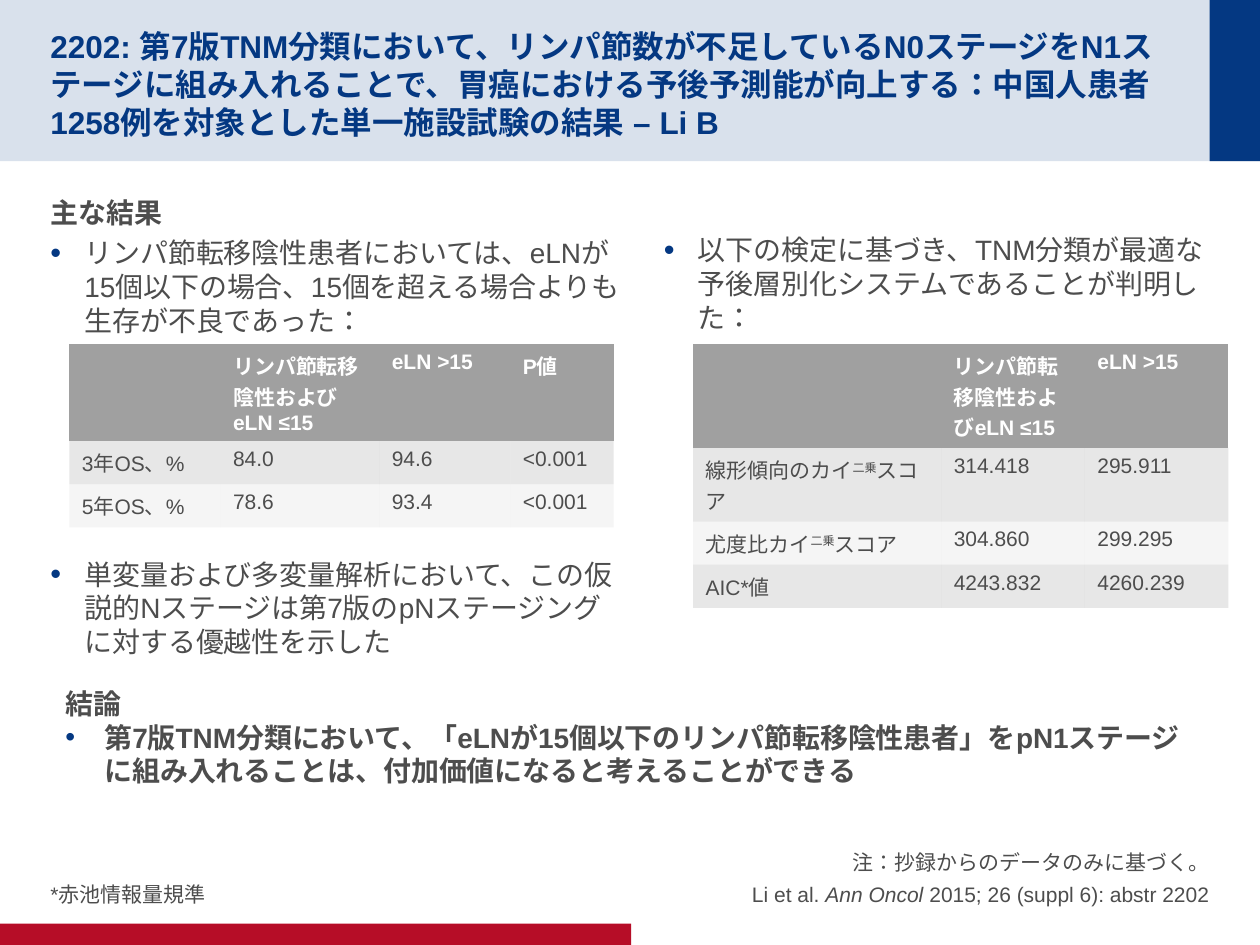
from lxml import etree
from pptx import Presentation
from pptx import util as u
from pptx.dml.color import RGBColor
from pptx.enum import lang, shapes, text
from pptx.oxml import ns

NAVY = RGBColor(0x04, 0x38, 0x82)
RED = RGBColor(0xB6, 0x0D, 0x27)
DARK = RGBColor(0x4D, 0x4D, 0x4D)
GREY = RGBColor(0xA0, 0xA0, 0xA0)
WHITE = RGBColor(0xFF, 0xFF, 0xFF)
NO_STYLE = "{2D5ABB26-0587-4C30-8999-92F81FD0307C}"
SQUARED = ("二乗", {"raised": True})


class Deck:
    """Holds the style and the current slide, with a method for each kind of element."""

    font = "Arial"

    def __init__(self, prs, layout):
        self.s = prs.slides.add_slide(prs.slide_layouts[layout])
        self.holders = {p.placeholder_format.idx: p for p in self.s.placeholders}

    def sub(self, parent, tag, **attrs):
        return etree.SubElement(parent, ns.qn(tag), attrs)

    def place(self, sp, box):
        for name, value in zip(("left", "top", "width", "height"), box):
            setattr(sp, name, u.Inches(value))

    def fill(self, target, color, alpha=100):
        target.fill.solid()
        target.fill.fore_color.rgb = color
        if alpha < 100:
            holder = target._tc.tcPr if hasattr(target, "_tc") else target._element.spPr
            clr = holder.find(ns.qn("a:solidFill"))[0]
            self.sub(clr, "a:alpha", val=str(alpha * 1000))

    def band(self, box, color, alpha=100):
        sp = self.s.shapes.add_shape(shapes.MSO_SHAPE.RECTANGLE, *map(u.Inches, box))
        sp.shadow.inherit = False
        self.fill(sp, color, alpha)
        sp.line.fill.background()
        return sp

    def to_back(self, bands):
        for i, sp in enumerate(bands):
            self.s.shapes._spTree.insert(2 + i, sp._element)

    def runs(self, p, content, size, color=DARK, bold=False, east=True):
        for item in [content] if isinstance(content, str) else content:
            words, extra = (item, {}) if isinstance(item, str) else item
            r = p.add_run()
            r.text = words
            fmt = {"name": self.font, "size": u.Pt(size), "bold": bold,
                   "italic": extra.get("italic", False),
                   "language_id": lang.MSO_LANGUAGE_ID.JAPANESE}
            for key, value in fmt.items():
                setattr(r.font, key, value)
            r.font.color.rgb = color
            rpr = r._r.get_or_add_rPr()
            if east:
                self.sub(rpr, "a:ea", typeface=self.font)
            if extra.get("raised"):
                rpr.set("baseline", "30000")

    def paragraph(self, p, content, size=16, color=DARK, bold=False, indent=0,
                  bullet_size=110, before=0, after=4, align=text.PP_ALIGN.LEFT):
        fmt = {"alignment": align, "space_before": u.Pt(before),
               "space_after": u.Pt(after)}
        for key, value in fmt.items():
            setattr(p, key, value)
        ppr = p._p.get_or_add_pPr()
        ppr.set("marL", str(u.Inches(indent)))
        ppr.set("indent", str(-u.Inches(indent)))
        if indent:
            self.sub(self.sub(ppr, "a:buClr"), "a:srgbClr", val=str(NAVY))
            self.sub(ppr, "a:buSzPct", val=str(bullet_size * 1000))
            self.sub(ppr, "a:buFont", typeface=self.font)
            self.sub(ppr, "a:buChar", char="•")
        else:
            self.sub(ppr, "a:buNone")
        self.runs(p, content, size, color, bold)

    def set_text(self, sp, paragraphs, anchor, insets):
        tf = sp.text_frame
        fmt = {"word_wrap": True, "auto_size": text.MSO_AUTO_SIZE.NONE,
               "vertical_anchor": anchor}
        sides = ("margin_left", "margin_top", "margin_right", "margin_bottom")
        fmt.update(zip(sides, map(u.Inches, insets)))
        for key, value in fmt.items():
            setattr(tf, key, value)
        for i, options in enumerate(paragraphs):
            self.paragraph(tf.add_paragraph() if i else tf.paragraphs[0], **options)

    def placeholder(self, idx, box, paragraphs, anchor, insets=(0, 0, 0, 0)):
        sp = self.holders.pop(idx)
        self.place(sp, box)
        self.set_text(sp, paragraphs, anchor, insets)

    def textbox(self, box, paragraphs):
        sp = self.s.shapes.add_textbox(*map(u.Inches, box))
        self.set_text(sp, paragraphs, text.MSO_ANCHOR.TOP, (0.1, 0.05, 0.1, 0.05))

    def table(self, left, top, widths, rows, row_height=0.33):
        box = (left, top, sum(widths), row_height * len(rows))
        frame = self.s.shapes.add_table(len(rows), len(widths), *map(u.Inches, box))
        tbl = frame.table
        tbl.first_row = tbl.horz_banding = False
        tbl._tbl.tblPr[0].text = NO_STYLE
        for col, width in zip(tbl.columns, widths):
            col.width = u.Inches(width)
        for i, row in enumerate(rows):
            head = i == 0
            for j, content in enumerate(row):
                cell = tbl.cell(i, j)
                self.fill(cell, GREY, 100 if head else 25 if i % 2 else 10)
                if content:
                    self.runs(cell.text_frame.paragraphs[0], content, 12,
                              WHITE if head else DARK, head, east=False)

    def drop_empty(self):
        for sp in self.holders.values():
            sp._element.getparent().remove(sp._element)


def main():
    prs = Presentation()
    prs.slide_width, prs.slide_height = u.Inches(10), u.Inches(7.5)
    d = Deck(prs, 4)
    d.to_back([d.band((0, 0, 10, 1.28), NAVY, 15),
               d.band((9.6, 0, 0.4, 1.28), NAVY),
               d.band((0, 7.33, 5.01, 0.17), RED)])

    top, middle, bottom = (text.MSO_ANCHOR.TOP, text.MSO_ANCHOR.MIDDLE,
                           text.MSO_ANCHOR.BOTTOM)
    d.placeholder(0, (0.4, 0.2, 9.01, 0.88), [dict(
        content="2202: 第7版TNM分類において、リンパ節数が不足しているN0ステージをN1ステージに"
                "組み入れることで、胃癌における予後予測能が向上する：中国人患者1258例を対象とした"
                "単一施設試験の結果 – Li B",
        size=18, color=NAVY, bold=True, after=0)], middle, (0, 0.05, 0, 0))
    d.placeholder(2, (0.4, 1.5, 4.52, 4.38), [
        dict(content="主な結果", bold=True),
        dict(content="リンパ節転移陰性患者においては、eLNが15個以下の場合、"
                     "15個を超える場合よりも生存が不良であった：", indent=0.27),
        dict(content="単変量および多変量解析において、この仮説的Nステージは"
                     "第7版のpNステージングに対する優越性を示した",
             indent=0.27, before=122)], top, (0, 0.05, 0, 0.05))
    d.placeholder(1, (0.4, 6.67, 4.52, 0.53),
                  [dict(content="*赤池情報量規準", size=12)], bottom)
    source = ["Li et al. ", ("Ann Oncol", {"italic": True}),
              " 2015; 26 (suppl 6): abstr 2202"]
    d.placeholder(3, (5.08, 6.67, 4.52, 0.53), [
        dict(content=c, size=12, align=text.PP_ALIGN.RIGHT)
        for c in ("注：抄録からのデータのみに基づく。", source)], bottom)
    d.drop_empty()

    heads = ["", "リンパ節転移陰性およびeLN ≤15", "eLN >15"]
    d.table(0.55, 2.73, (1.2, 1.26, 1.04, 0.82), [
        heads + ["P値"],
        ["3年OS、%", "84.0", "94.6", "<0.001"],
        ["5年OS、%", "78.6", "93.4", "<0.001"]])
    d.table(5.5, 2.73, (1.97, 1.14, 1.14), [
        heads,
        [["線形傾向のカイ", SQUARED, "スコア"], "314.418", "295.911"],
        [["尤度比カイ", SQUARED, "スコア"], "304.860", "299.295"],
        ["AIC*値", "4243.832", "4260.239"]])

    d.textbox((5.17, 1.8, 4.5, 0.64), [dict(
        content="以下の検定に基づき、TNM分類が最適な予後層別化システムであることが判明した：",
        indent=0.27)])
    d.textbox((0.42, 5.4, 9.17, 0.91), [
        dict(content="結論", bold=True, after=0),
        dict(content="第7版TNM分類において、「eLNが15個以下のリンパ節転移陰性患者」を"
                     "pN1ステージに組み入れることは、付加価値になると考えることができる",
             bold=True, indent=0.31, bullet_size=100, after=0)])
    prs.save("out.pptx")


if __name__ == "__main__":
    main()
